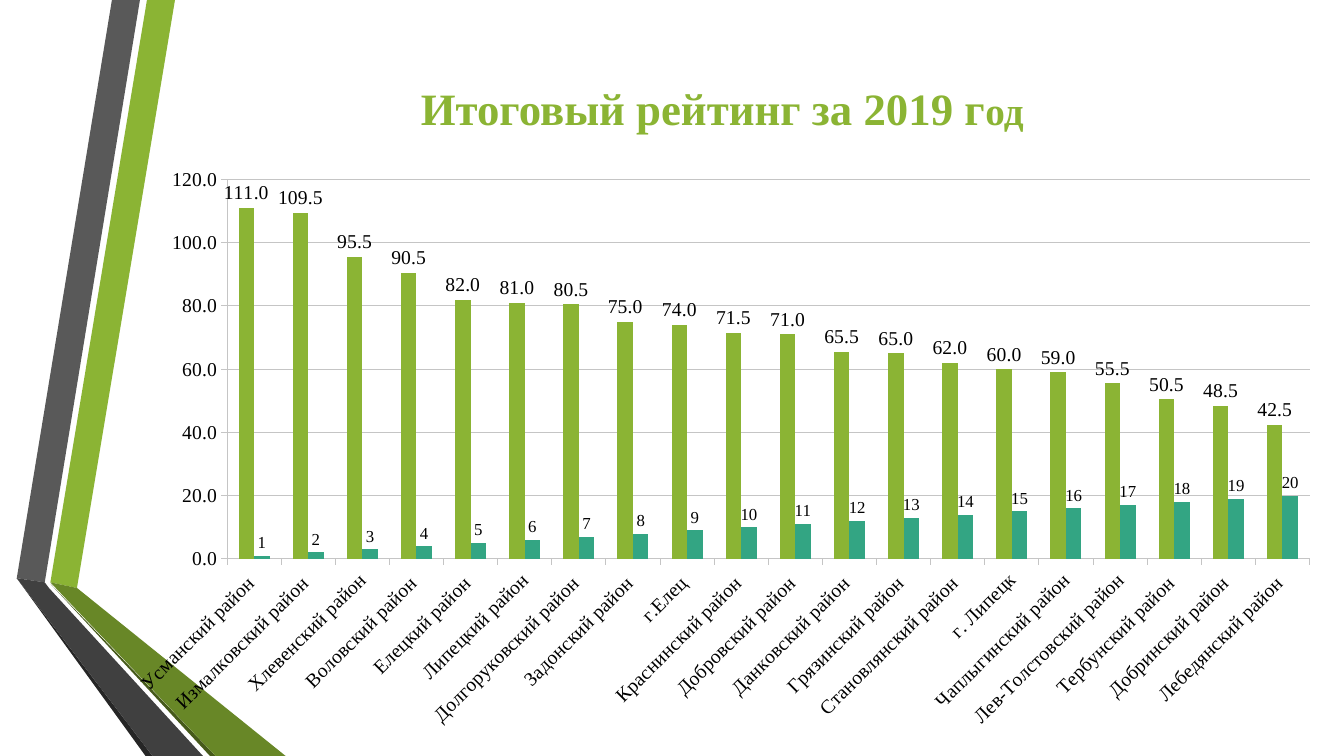
from dataclasses import dataclass

from lxml import etree
from pptx import Presentation
from pptx.chart import data
from pptx.dml import color
from pptx.enum import chart as chart_enum, text
from pptx.oxml import ns
from pptx.util import Pt


@dataclass(frozen=True)
class Theme:
    font: str = "Times New Roman"
    lime: str = "8BB434"
    teal: str = "33A583"
    olive: str = "688727"
    dark_olive: str = "465A1A"
    grey: str = "595959"
    dark_grey: str = "404040"
    charcoal: str = "262626"
    rule: str = "C5C5C5"
    ink: str = "000000"
    title_size: float = 32
    title_end_size: float = 28
    axis_size: float = 14
    rank_size: float = 12


THEME = Theme()
WIDTH, HEIGHT = 960, 540

RIBBONS = [
    (THEME.lime, [(36, 416.2), (55.4, 419.8), (124.6, 0), (104.6, 0)]),
    (THEME.grey, [(100, 0), (80, 0), (11.6, 412.6), (31.6, 415.5)]),
    (THEME.charcoal, [(11.6, 412.6), (104.4, 540), (108.7, 540)]),
    (THEME.dark_olive, [(36, 416.9), (149.8, 540), (154, 540)]),
    (THEME.olive, [(36, 416.2), (154, 540), (203.8, 540), (55.4, 419.8)]),
    (THEME.dark_grey, [(145.4, 540), (34.6, 419.8), (31.6, 415.5), (11.6, 412.6), (108.7, 540)]),
]

RATING = [
    ("Усманский район ", 111),
    ("Измалковский район ", 109.5),
    ("Хлевенский район", 95.5),
    ("Воловский район ", 90.5),
    ("Елецкий район ", 82),
    ("Липецкий район", 81),
    ("Долгоруковский район ", 80.5),
    ("Задонский район ", 75),
    ("г.Елец ", 74),
    ("Краснинский район ", 71.5),
    ("Добровский район ", 71),
    ("Данковский район ", 65.5),
    ("Грязинский район ", 65),
    ("Становлянский район ", 62),
    ("г. Липецк", 60),
    ("Чаплыгинский район", 59),
    ("Лев-Толстовский район", 55.5),
    ("Тербунский район ", 50.5),
    ("Добринский район ", 48.5),
    ("Лебедянский район ", 42.5),
]


def rgb(value):
    return color.RGBColor.from_string(value)


def format_font(font, size, fill=THEME.ink, bold=False):
    font.name = THEME.font
    font.size = Pt(size)
    font.bold = bold
    font.color.rgb = rgb(fill)


def add_run(paragraph, wording, **style):
    run = paragraph.add_run()
    run.text = wording
    format_font(run.font, **style)


def add_ribbons(slide, left, top):
    for fill, points in RIBBONS:
        builder = slide.shapes.build_freeform(*points[0], scale=Pt(1))
        builder.add_line_segments(points[1:], close=True)
        shape = builder.convert_to_shape(Pt(left), Pt(top))
        shape.shadow.inherit = False
        shape.fill.solid()
        shape.fill.fore_color.rgb = rgb(fill)
        shape.line.fill.background()


def add_title(slide, left, top, width, height):
    box = slide.shapes.add_textbox(Pt(left), Pt(top), Pt(width), Pt(height))
    frame = box.text_frame
    frame.word_wrap = True
    frame.auto_size = text.MSO_AUTO_SIZE.SHAPE_TO_FIT_TEXT
    paragraph = frame.paragraphs[0]
    paragraph.alignment = text.PP_ALIGN.CENTER
    add_run(paragraph, "Итоговый рейтинг за 2019 г", size=THEME.title_size, fill=THEME.lime, bold=True)
    add_run(paragraph, "од", size=THEME.title_end_size, fill=THEME.lime, bold=True)


def format_line(line):
    line.color.rgb = rgb(THEME.rule)
    line.width = Pt(0.75)


def format_axis(axis):
    axis.major_tick_mark = chart_enum.XL_TICK_MARK.OUTSIDE
    axis.minor_tick_mark = chart_enum.XL_TICK_MARK.NONE
    format_line(axis.format.line)
    format_font(axis.tick_labels.font, THEME.axis_size)


def format_series(series, fill, label_size, number_format):
    series.format.fill.solid()
    series.format.fill.fore_color.rgb = rgb(fill)
    series.invert_if_negative = False
    labels = series.data_labels
    labels.show_value = True
    labels.position = chart_enum.XL_LABEL_POSITION.OUTSIDE_END
    labels.number_format = number_format
    labels.number_format_is_linked = False
    format_font(labels.font, label_size)


def place_plot(chart, **fractions):
    area = chart.element.find(".//" + ns.qn("c:plotArea"))
    for old in area.findall(ns.qn("c:layout")):
        area.remove(old)
    layout = etree.Element(ns.qn("c:layout"))
    manual = etree.SubElement(layout, ns.qn("c:manualLayout"))
    settings = {"layoutTarget": "inner", "xMode": "edge", "yMode": "edge", **fractions}
    for name, value in settings.items():
        etree.SubElement(manual, ns.qn("c:" + name)).set("val", str(value))
    area.insert(0, layout)


def add_rating_chart(slide, left, top, width, height):
    districts, scores = zip(*RATING)
    chart_data = data.CategoryChartData()
    chart_data.categories = districts
    chart_data.add_series("Series 1", scores)
    chart_data.add_series("Series 2", range(1, len(RATING) + 1))
    chart = slide.shapes.add_chart(
        chart_enum.XL_CHART_TYPE.COLUMN_CLUSTERED,
        Pt(left), Pt(top), Pt(width), Pt(height), chart_data,
    ).chart
    chart.has_legend = False
    chart.has_title = False
    format_font(chart.font, THEME.rank_size)
    place_plot(chart, x=0.125, y=0.05, w=0.871, h=0.638)

    plot = chart.plots[0]
    plot.vary_by_categories = False
    plot.gap_width = 150
    plot.overlap = 0
    score_series, rank_series = plot.series
    format_series(score_series, THEME.lime, THEME.axis_size, "0.0")
    format_series(rank_series, THEME.teal, THEME.rank_size, "General")

    format_axis(chart.category_axis)
    body = chart.element.find(".//" + ns.qn("c:catAx")).find(".//" + ns.qn("a:bodyPr"))
    body.set("rot", "-2700000")
    body.set("vert", "horz")

    value_axis = chart.value_axis
    format_axis(value_axis)
    value_axis.minimum_scale, value_axis.maximum_scale = 0, 120
    value_axis.major_unit = 20
    value_axis.tick_labels.number_format = "0.0"
    value_axis.tick_labels.number_format_is_linked = False
    value_axis.has_major_gridlines = True
    format_line(value_axis.major_gridlines.format.line)


def main():
    presentation = Presentation()
    presentation.slide_width = Pt(WIDTH)
    presentation.slide_height = Pt(HEIGHT)
    slide = presentation.slides.add_slide(presentation.slide_layouts[6])
    add_ribbons(slide, 0, 0)
    add_title(slide, 179.3, 54, 673.2, 46)
    add_rating_chart(slide, 51.2, 107, 887.8, 424.8)
    presentation.save("out.pptx")


if __name__ == "__main__":
    main()
